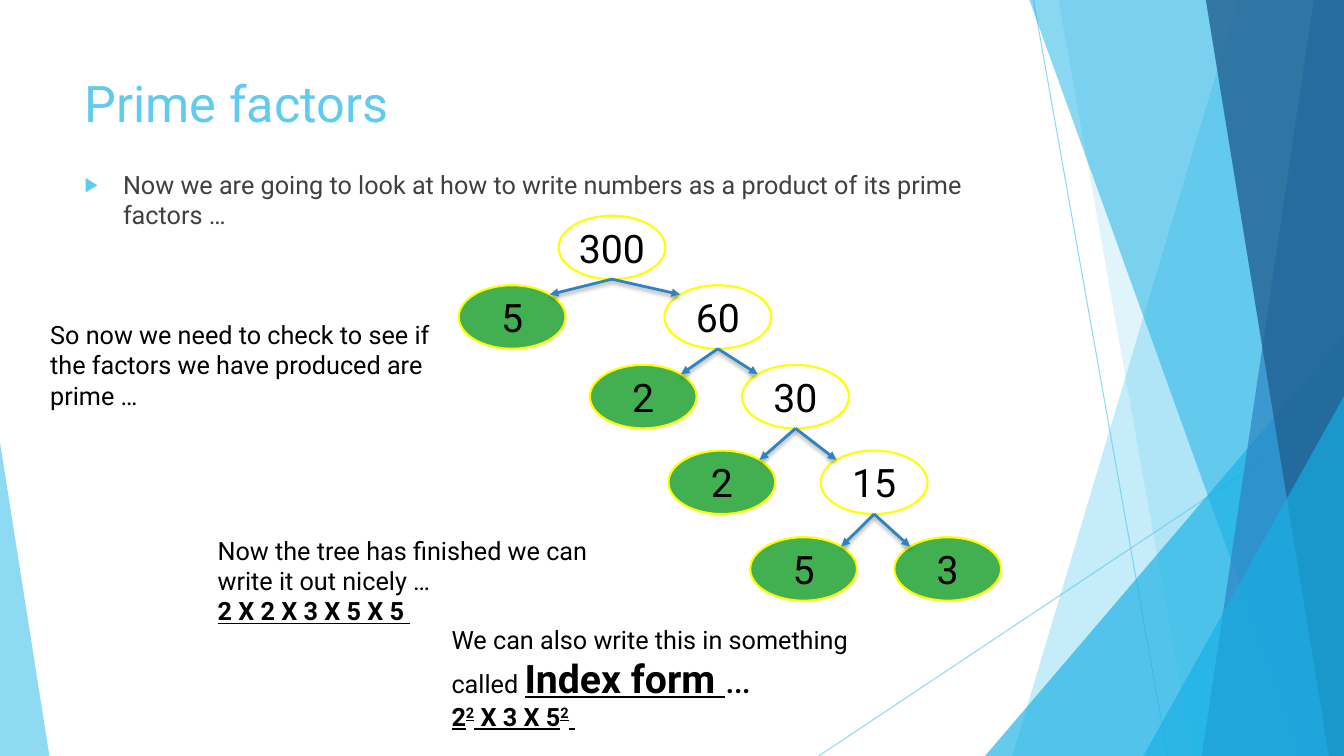
from dataclasses import dataclass
from math import sqrt

from lxml.etree import SubElement
from pptx import Presentation
from pptx.dml.color import RGBColor
from pptx.enum.shapes import MSO_CONNECTOR as Connector, MSO_SHAPE as Shape
from pptx.enum.text import MSO_ANCHOR as Anchor, MSO_AUTO_SIZE as AutoSize, PP_ALIGN as Align
from pptx.oxml.ns import qn
from pptx.util import Inches, Pt

COLORS = {
    "sky": "5FCBEF", "cyan": "17B0E4", "blue": "2E83C3", "navy": "226292",
    "prime": "42B051", "outline": "FFFF00", "body": "404040", "black": "000000",
}
FONT = "Roboto"
SLIDE_W, SLIDE_H = 13.33, 7.5
NODE_W, NODE_H = 1.06, 0.63


@dataclass
class Band:
    """Panel that reaches the right edge, with a slanted left side."""
    top_x: float
    foot_x: float
    color: str
    opacity: int


@dataclass
class Wedge:
    """Right-angled triangle that stands on the bottom edge."""
    left: float
    top: float
    width: float
    apex: float
    color: str
    opacity: int


@dataclass
class Factor:
    value: str
    left: float
    top: float
    prime: bool = False


@dataclass
class Note:
    left: float
    top: float
    width: float
    height: float
    paragraphs: list


BACKDROP = [
    Band(12.28, 10.04, "sky", 36),
    Band(10.5, 11.83, "sky", 20),
    Wedge(9.77, 3.33, 3.56, 1, "cyan", 66),
    Band(10.21, 12.91, "cyan", 50),
    Band(13.03, 11.92, "blue", 70),
    Band(11.96, 13.18, "navy", 80),
    Wedge(11.34, 3.93, 1.99, 1, "cyan", 66),
    Wedge(0, 4.39, 0.49, 0, "sky", 70),
]
HAIRLINES = [(10.25, 0, 11.58, SLIDE_H), (SLIDE_W, 4.03, 8.12, SLIDE_H)]

ROOT = Factor("300", 5.54, 2.14)
SPLITS = [  # each pair: a prime on the left, the factor split next on the right
    (Factor("5", 4.55, 2.83, True), Factor("60", 6.59, 2.83)),
    (Factor("2", 5.85, 3.62, True), Factor("30", 7.36, 3.62)),
    (Factor("2", 6.63, 4.47, True), Factor("15", 8.14, 4.47)),
    (Factor("5", 7.44, 5.33, True), Factor("3", 8.87, 5.33, True)),
]

STRONG = {"bold": True, "underline": True}
RAISED = {**STRONG, "baseline": 30}
NOTES = [
    Note(0.4, 3.12, 4.1, 1.01, [
        [("So now we need to check to see if the factors we have produced are prime …", {})],
    ]),
    Note(2.06, 5.26, 4.19, 1.01, [
        [("Now the tree has finished we can write it out nicely …", {})],
        [("2 X 2 X 3 X 5 X 5 ", STRONG)],
    ]),
    Note(4.38, 6.14, 4.19, 1.18, [
        [("We can also write this in something called ", {}),
         ("Index form ", {**STRONG, "size": 28}), ("…", {"size": 28})],
        [("2", STRONG), ("2", RAISED), (" X 3 X 5", STRONG), ("2", RAISED), (" ", STRONG)],
    ]),
]


def rgb(color: str) -> RGBColor:
    return RGBColor.from_string(COLORS[color])


def write(paragraph, text: str, *, size: float = 18, color: str = "black",
          bold: bool = False, underline: bool = False, baseline: int = 0) -> None:
    run = paragraph.add_run()
    run.text = text
    font = run.font
    font.name, font.size, font.bold, font.underline = FONT, Pt(size), bold, underline
    font.color.rgb = rgb(color)
    if baseline:
        run._r.get_or_add_rPr().set("baseline", str(baseline * 1000))


def paint(fill, color: str, opacity: int) -> None:
    fill.solid()
    fill.fore_color.rgb = rgb(color)
    tint = fill._xPr.find(qn("a:solidFill"))[0]
    SubElement(tint, qn("a:alpha"), val=str(opacity * 1000))


def draw_line(shapes, ends: tuple, color: str, width: float):
    line = shapes.add_connector(Connector.STRAIGHT, *map(Inches, ends))
    line.line.width = Pt(width)
    line.line.color.rgb = rgb(color)
    return line


def draw_hairline(shapes, ends: tuple) -> None:
    hairline = draw_line(shapes, ends, "sky", 0.75)
    paint(hairline.line.fill, "sky", 70)
    SubElement(hairline._element.spPr, qn("a:effectLst"))


def draw_panel(shapes, part: Band | Wedge) -> None:
    if isinstance(part, Band):
        corners = [(SLIDE_W, 0), (SLIDE_W, SLIDE_H), (part.foot_x, SLIDE_H)]
        outline = shapes.build_freeform(Inches(part.top_x), 0)
        outline.add_line_segments([(Inches(x), Inches(y)) for x, y in corners])
        panel = outline.convert_to_shape()
    else:
        box = (part.left, part.top, part.width, SLIDE_H - part.top)
        panel = shapes.add_shape(Shape.ISOSCELES_TRIANGLE, *map(Inches, box))
        panel.adjustments[0] = part.apex
    panel.shadow.inherit = False
    panel.line.fill.background()
    paint(panel.fill, part.color, part.opacity)


def draw_factor(shapes, factor: Factor) -> None:
    box = (factor.left, factor.top, NODE_W, NODE_H)
    node = shapes.add_shape(Shape.OVAL, *map(Inches, box))
    node.shadow.inherit = False
    node.line.color.rgb = rgb("outline")
    node.line.width = Pt(1.5)
    if factor.prime:
        node.fill.solid()
        node.fill.fore_color.rgb = rgb("prime")
    else:
        node.fill.background()
    frame = node.text_frame
    frame.word_wrap = False
    frame.vertical_anchor = Anchor.MIDDLE
    frame.margin_left = frame.margin_right = frame.margin_top = frame.margin_bottom = 0
    frame.paragraphs[0].alignment = Align.CENTER
    write(frame.paragraphs[0], factor.value, size=28)


def draw_branch(shapes, parent: Factor, child: Factor) -> None:
    """Arrow from the parent's foot to the facing shoulder of the child."""
    start_x, start_y = parent.left + NODE_W / 2, parent.top + NODE_H
    side = 1 if child.left < parent.left else -1
    end_x = child.left + NODE_W / 2 * (1 + side / sqrt(2))
    end_y = child.top + NODE_H / 2 * (1 - 1 / sqrt(2))
    branch = draw_line(shapes, (start_x, start_y, end_x, end_y), "blue", 2)
    SubElement(branch.line._get_or_add_ln(), qn("a:tailEnd"), type="triangle")
    effects = SubElement(branch._element.spPr, qn("a:effectLst"))
    shadow = SubElement(effects, qn("a:outerShdw"), blurRad=str(Pt(3)), dist=str(Pt(2)),
                        dir="5400000", rotWithShape="0")
    shade = SubElement(shadow, qn("a:srgbClr"), val=COLORS["black"])
    SubElement(shade, qn("a:alpha"), val="35000")


def draw_note(shapes, note: Note) -> None:
    box = (note.left, note.top, note.width, note.height)
    frame = shapes.add_textbox(*map(Inches, box)).text_frame
    frame.word_wrap = True
    for index, runs in enumerate(note.paragraphs):
        paragraph = frame.add_paragraph() if index else frame.paragraphs[0]
        for text, style in runs:
            write(paragraph, text, **style)


def place(holder, top: float, height: float):
    """Move a placeholder and return its first paragraph."""
    holder.left, holder.top, holder.width, holder.height = map(Inches, (0.74, top, 9.4, height))
    frame = holder.text_frame
    frame.vertical_anchor, frame.auto_size, frame.word_wrap = Anchor.TOP, AutoSize.NONE, True
    frame.paragraphs[0].alignment = Align.LEFT
    return frame.paragraphs[0]


def main() -> None:
    deck = Presentation()
    deck.slide_width, deck.slide_height = Inches(SLIDE_W), Inches(SLIDE_H)
    slide = deck.slides.add_slide(deck.slide_layouts[1])
    shapes = slide.shapes

    # Backdrop
    for ends in HAIRLINES:
        draw_hairline(shapes, ends)
    for part in BACKDROP:
        draw_panel(shapes, part)

    # Title and bulleted introduction
    write(place(shapes.title, 0.67, 1.44), "Prime factors", size=36, color="sky")
    intro = place(slide.placeholders[1], 1.63, 4.24)
    intro.space_before = Pt(10)
    write(intro, "Now we are going to look at how to write numbers as a product "
          "of its prime factors …", color="body")
    layout = intro._p.get_or_add_pPr()
    layout.set("marL", str(Inches(0.38)))
    layout.set("indent", str(Inches(-0.38)))
    SubElement(SubElement(layout, qn("a:buClr")), qn("a:srgbClr"), val=COLORS["sky"])
    SubElement(layout, qn("a:buSzPct"), val="80000")
    SubElement(layout, qn("a:buChar"), char="▶")

    # Factor tree
    draw_factor(shapes, ROOT)
    parent = ROOT
    for pair in SPLITS:
        for child in pair:
            draw_factor(shapes, child)
            draw_branch(shapes, parent, child)
        parent = pair[1]

    # Explanations
    for note in NOTES:
        draw_note(shapes, note)
    deck.save("out.pptx")


if __name__ == "__main__":
    main()
